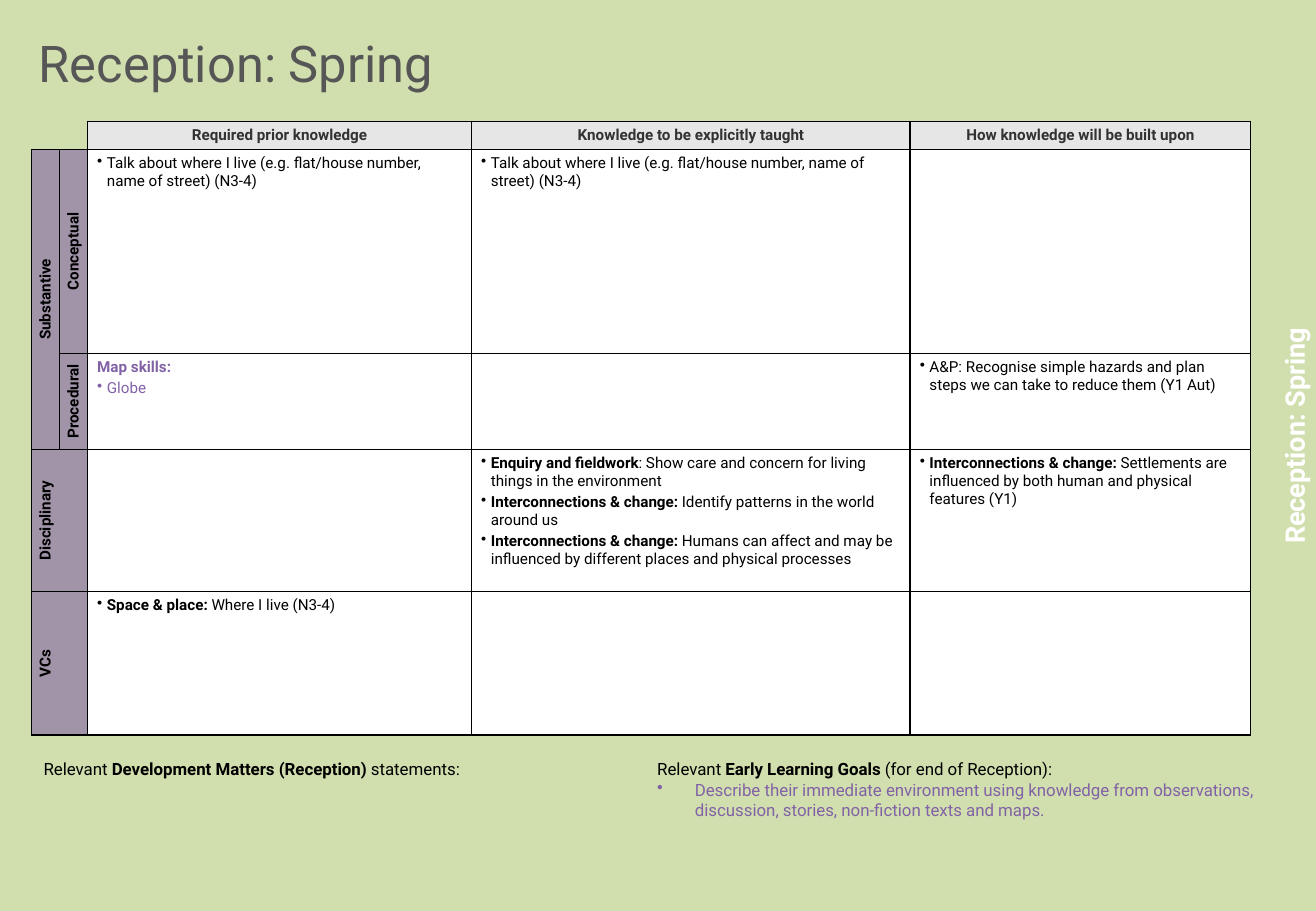
import pptx
import pptx.dml.color
import pptx.enum.text
import pptx.oxml.ns
import pptx.oxml.xmlchemy
import pptx.util

Inches = pptx.util.Inches
Pt = pptx.util.Pt
ALIGN = pptx.enum.text.PP_ALIGN
MIDDLE = pptx.enum.text.MSO_ANCHOR.MIDDLE
FONT = "Roboto"
COLORS = {
    "background": "D1DFAF", "title": "565656", "header": "E6E6E6",
    "header_text": "323232", "purple": "8262A6", "black": "000000", "white": "FFFFFF",
}
COLUMN_WIDTHS = [0.23, 0.23, 3.16, 3.61, 2.8]
ROW_HEIGHTS = [0.22, 1.68, 0.79, 1.17, 1.18]
HEADERS = ["Required prior knowledge", "Knowledge to be explicitly taught",
           "How knowledge will be built upon"]
# Row label: (row, column, last row, last column)
ROW_LABELS = {
    "Substantive": (1, 0, 2, 0),
    "Conceptual": (1, 1, 1, 1),
    "Procedural": (2, 1, 2, 1),
    "Disciplinary": (3, 0, 3, 1),
    "VCs": (4, 0, 4, 1),
}
HOME = "Talk about where I live (e.g. flat/house number, name of street) (N3-4)"
# Bulleted statements by (row, column); ** switches bold on and off
STATEMENTS = {
    (1, 2): [HOME],
    (1, 3): [HOME],
    (2, 4): ["A&P: Recognise simple hazards and plan steps we can take to reduce them (Y1 Aut)"],
    (3, 3): [
        "**Enquiry and fieldwork**: Show care and concern for living things in the environment",
        "**Interconnections & change: **Identify patterns in the world around us",
        "**Interconnections & change: **Humans can affect and may be influenced by "
        "different places and physical processes",
    ],
    (3, 4): ["**Interconnections & change: **Settlements are influenced by both human "
             "and physical features (Y1)"],
    (4, 2): ["**Space & place: **Where I live (N3-4)"],
}


def rgb(name):
    return pptx.dml.color.RGBColor.from_string(COLORS[name])


def add_element(parent, tag, **attributes):
    element = pptx.oxml.xmlchemy.OxmlElement(tag)
    for name, value in attributes.items():
        element.set(name, str(value))
    parent.append(element)
    return element


def add_text(frame, text, size=9, color="black", align=None, hanging=0, after=0,
             outline=False):
    """Add one paragraph, using the empty first one when there is one."""
    first = frame.paragraphs[0]
    paragraph = frame.add_paragraph() if first.runs else first
    paragraph.alignment = align
    if hanging:
        properties = paragraph._p.get_or_add_pPr()
        properties.set("marL", str(Inches(hanging)))
        properties.set("indent", str(-Inches(hanging)))
        add_element(properties, "a:buChar", char="•")
    if after:
        paragraph.space_after = Pt(after)
    for index, part in enumerate(text.split("**")):
        if not part:
            continue
        run = paragraph.add_run()
        run.text = part
        if outline:
            line = add_element(run._r.get_or_add_rPr(), "a:ln", w=Pt(1))
            fill = add_element(line, "a:solidFill")
            add_element(fill, "a:srgbClr", val=COLORS[color])
        run.font.name = FONT
        run.font.size = Pt(size)
        run.font.bold = index % 2 == 1
        run.font.color.rgb = rgb(color)


def add_box(slide, left, top, width, height, anchor=None, rotation=0):
    box = slide.shapes.add_textbox(Inches(left), Inches(top), Inches(width), Inches(height))
    box.rotation = rotation
    box.text_frame.word_wrap = True
    box.text_frame.vertical_anchor = anchor
    return box.text_frame


def set_borders(cell, visible):
    for side in "LRTB":
        line = add_element(cell._tc.get_or_add_tcPr(), f"a:ln{side}", w=Pt(1))
        if side in visible:
            fill = add_element(line, "a:solidFill")
            add_element(fill, "a:srgbClr", val=COLORS["black"])
        else:
            add_element(line, "a:noFill")


def style_cell(cell, row, column):
    """Give a cell its borders, fill and margins by its place in the grid."""
    corner = row == 0 and column < 2
    label = row > 0 and column < 2
    set_borders(cell, ("B", "RB")[column] if corner else "LRTB")
    if corner:
        cell.fill.background()
    else:
        cell.fill.solid()
        name = "purple" if label else "header" if row == 0 else "white"
        cell.fill.fore_color.rgb = rgb(name)
    if label:
        color = cell._tc.tcPr.find(".//" + pptx.oxml.ns.qn("a:solidFill") + "[last()]/"
                                   + pptx.oxml.ns.qn("a:srgbClr"))
        color = cell._tc.tcPr.findall(pptx.oxml.ns.qn("a:solidFill"))[-1][0]
        add_element(color, "a:alpha", val=60000)
        cell._tc.tcPr.set("vert", "vert270")
    statement = row > 0 and column > 1
    cell.margin_left = cell.margin_right = Inches(0.08 if statement else 0.04)
    cell.margin_top = cell.margin_bottom = Inches(0.04)
    if not statement:
        cell.vertical_anchor = MIDDLE
    # Empty cells keep the small text size, so rows do not grow
    add_element(cell.text_frame.paragraphs[0]._p, "a:endParaRPr", sz=900)


def add_knowledge_table(slide):
    shape = slide.shapes.add_table(
        len(ROW_HEIGHTS), len(COLUMN_WIDTHS), Inches(0.26), Inches(1),
        Inches(sum(COLUMN_WIDTHS)), Inches(sum(ROW_HEIGHTS)))
    table = shape.table
    table.first_row = table.horz_banding = False
    for column, width in zip(table.columns, COLUMN_WIDTHS):
        column.width = Inches(width)
    for row, height in zip(table.rows, ROW_HEIGHTS):
        row.height = Inches(height)
    for row in range(len(ROW_HEIGHTS)):
        for column in range(len(COLUMN_WIDTHS)):
            style_cell(table.cell(row, column), row, column)

    # Headers and row labels
    for column, header in enumerate(HEADERS, start=2):
        add_text(table.cell(0, column).text_frame, f"**{header}**",
                 color="header_text", align=ALIGN.CENTER)
    for label, (row, column, last_row, last_column) in ROW_LABELS.items():
        cell = table.cell(row, column)
        if (row, column) != (last_row, last_column):
            cell.merge(table.cell(last_row, last_column))
        add_text(cell.text_frame, f"**{label}**", align=ALIGN.CENTER)

    # Statements
    for place, statements in STATEMENTS.items():
        for statement in statements:
            add_text(table.cell(*place).text_frame, statement, hanging=0.08, after=2)
    skills = table.cell(2, 2).text_frame
    add_text(skills, "**Map skills:**", color="purple", after=2)
    add_text(skills, "Globe", color="purple", hanging=0.08, after=2)


def main():
    presentation = pptx.Presentation()
    presentation.slide_width = Inches(10.83)
    presentation.slide_height = Inches(7.5)
    slide = presentation.slides.add_slide(presentation.slide_layouts[6])
    slide.background.fill.solid()
    slide.background.fill.fore_color.rgb = rgb("background")

    # Title and side label
    title = "Reception: Spring"
    add_text(add_box(slide, 0.22, 0.26, 8.42, 0.5, anchor=MIDDLE), title,
             size=30, color="title", outline=True)
    add_text(add_box(slide, 9.46, 3.42, 2.38, 0.34, anchor=MIDDLE, rotation=270),
             f"**{title}**", size=16, color="white", align=ALIGN.CENTER)

    # Statements below the table
    goals = add_box(slide, 5.31, 6.2, 5.19, 0.54)
    add_text(goals, "Relevant **Early Learning Goals **(for end of Reception):", size=10)
    add_text(goals, "Describe their immediate environment using knowledge from observations, "
             "discussion, stories, non-fiction texts and maps.",
             size=10, color="purple", hanging=0.31)
    add_text(add_box(slide, 0.26, 6.2, 5.19, 0.3),
             "Relevant **Development Matters (Reception) **statements:", size=10)

    add_knowledge_table(slide)
    presentation.save("out.pptx")


if __name__ == "__main__":
    main()
